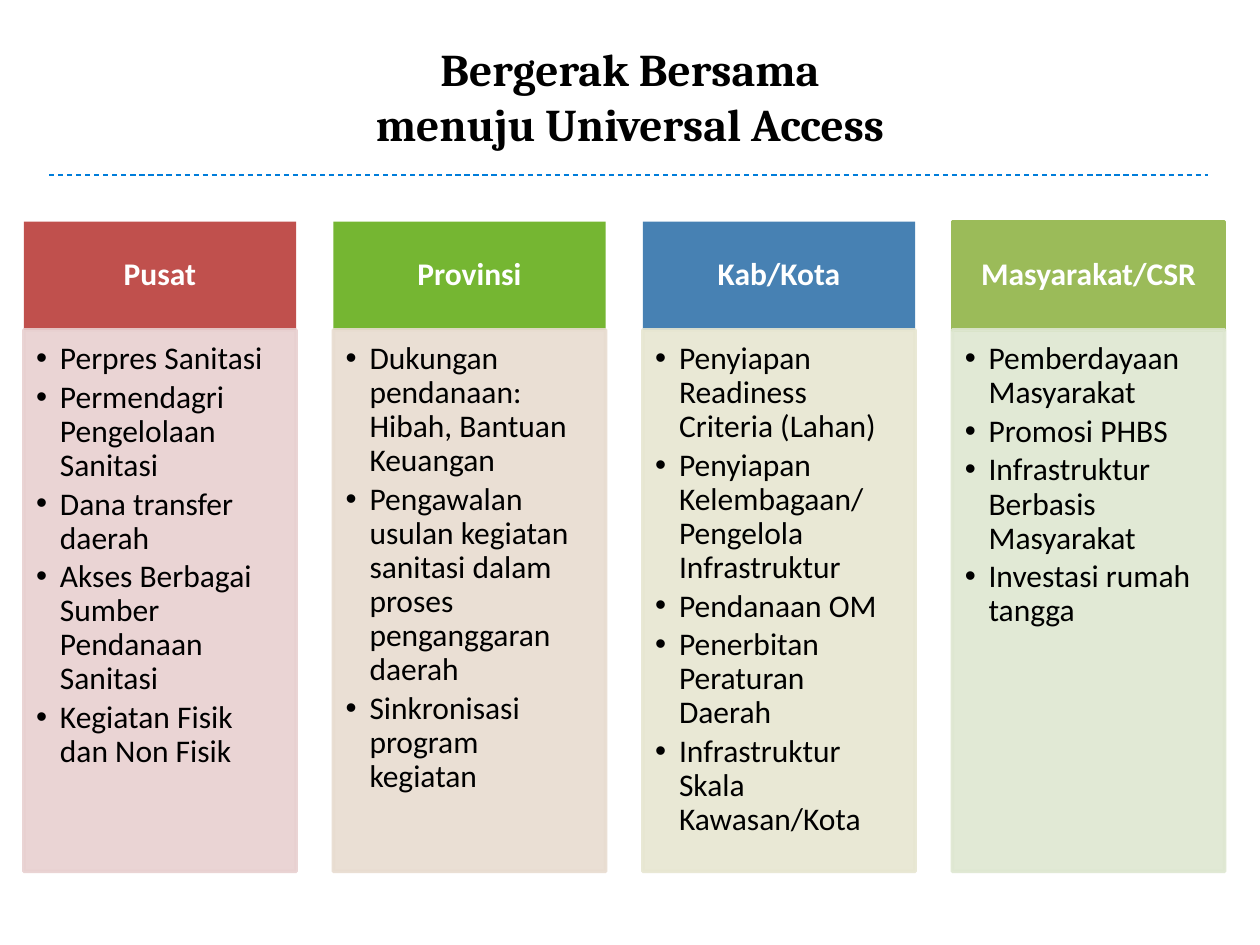
from pptx import Presentation
from pptx.dml.color import RGBColor
from pptx.enum.dml import MSO_LINE
from pptx.enum.shapes import MSO_CONNECTOR, MSO_SHAPE
from pptx.enum.text import MSO_ANCHOR as Anchor, MSO_AUTO_SIZE, PP_ALIGN as Align
from pptx.oxml.ns import qn
from pptx.util import Cm, Pt
from lxml.etree import SubElement

TITLE = ["Bergerak Bersama", "menuju Universal Access"]
TITLE_FONT = {"name": "Cambria", "size": Pt(25.9), "bold": True}
HEADER_FONT = {"name": "Calibri", "size": Pt(18), "bold": True}
LIST_FONT = {"name": "Calibri", "size": Pt(18), "bold": False}
HEADER_HEIGHT = 2.18
INDENT = Cm(0.48)

# Heading, header fill, header outline, list fill, list items
COLUMNS = [
    ("Pusat", "C0504D", None, "E8D0D0", [
        "Perpres Sanitasi",
        "Permendagri Pengelolaan Sanitasi",
        "Dana transfer daerah",
        "Akses Berbagai Sumber Pendanaan Sanitasi",
        "Kegiatan Fisik dan Non Fisik"]),
    ("Provinsi", "75B632", None, "E8DCD0", [
        "Dukungan pendanaan: Hibah, Bantuan Keuangan",
        "Pengawalan usulan kegiatan sanitasi dalam proses penganggaran daerah",
        "Sinkronisasi program kegiatan"]),
    ("Kab/Kota", "4781B3", None, "E7E6D1", [
        "Penyiapan Readiness Criteria (Lahan)",
        "Penyiapan Kelembagaan/ Pengelola Infrastruktur",
        "Pendanaan OM",
        "Penerbitan Peraturan Daerah",
        "Infrastruktur Skala Kawasan/Kota"]),
    ("Masyarakat/CSR", "9BBB59", "9BBB59", "DEE7D1", [
        "Pemberdayaan Masyarakat",
        "Promosi PHBS",
        "Infrastruktur Berbasis Masyarakat",
        "Investasi rumah tangga"]),
]


def paint(color_format, color, alpha=None):
    """Solid colour from a hex string, with optional opacity in percent."""
    color_format.fore_color.rgb = RGBColor.from_string(color)
    if alpha is not None:
        for element in color_format._xPr.iter(qn("a:srgbClr")):
            if element.find(qn("a:alpha")) is None:
                SubElement(element, qn("a:alpha"), val=str(alpha * 1000))


def apply(target, values):
    for name, value in values.items():
        setattr(target, name, value)


def set_frame(frame, anchor, insets):
    sides = ("margin_left", "margin_top", "margin_right", "margin_bottom")
    apply(frame, {"word_wrap": True, "auto_size": MSO_AUTO_SIZE.NONE,
                  "vertical_anchor": anchor})
    apply(frame, {side: Cm(inset) for side, inset in zip(sides, insets)})


def write(frame, lines, font, color, layout, bullets=False):
    for index, line in enumerate(lines):
        paragraph = frame.paragraphs[0] if index == 0 else frame.add_paragraph()
        apply(paragraph, layout)
        if bullets:
            properties = paragraph._p.get_or_add_pPr()
            properties.set("marL", str(INDENT))
            properties.set("indent", str(-INDENT))
            SubElement(properties, qn("a:buFont"), typeface="Arial")
            SubElement(properties, qn("a:buChar"), char="•")
        run = paragraph.add_run()
        run.text = line
        apply(run.font, font)
        paint_font = run.font.fill
        paint_font.solid()
        paint(paint_font, color)


def add_panel(slide, box, fill, outline=None, alpha=None):
    shape = slide.shapes.add_shape(MSO_SHAPE.RECTANGLE, *map(Cm, box))
    shape.shadow.inherit = False
    shape.fill.solid()
    paint(shape.fill, fill, alpha)
    if outline:
        shape.line.width = Pt(2)
        shape.line.fill.solid()
        paint(shape.line.fill, outline, alpha)
    else:
        shape.line.fill.background()
    return shape


def add_title(slide, box):
    left, top, width, height = box
    title = slide.shapes.title
    apply(title, {"left": Cm(left), "top": Cm(top),
                  "width": Cm(width), "height": Cm(height)})
    set_frame(title.text_frame, Anchor.MIDDLE, (0.25, 0.13, 0.25, 0.13))
    write(title.text_frame, TITLE, TITLE_FONT, "000000",
          {"alignment": Align.CENTER, "space_before": Pt(0)})


def add_rule(slide, left, right, y):
    rule = slide.shapes.add_connector(
        MSO_CONNECTOR.STRAIGHT, Cm(left), Cm(y), Cm(right), Cm(y))
    apply(rule.line, {"width": Pt(0.75), "dash_style": MSO_LINE.DASH})
    rule.line.fill.solid()
    paint(rule.line.fill, "007DDA")
    SubElement(rule._element.spPr, qn("a:effectLst"))


def add_column(slide, box, heading, header_fill, header_outline, list_fill, items):
    left, top, width, height = box

    # Header
    header = add_panel(slide, (left, top, width, HEADER_HEIGHT),
                       header_fill, header_outline)
    set_frame(header.text_frame, Anchor.MIDDLE, (0.36, 0.2, 0.36, 0.2))
    write(header.text_frame, [heading], HEADER_FONT, "FFFFFF",
          {"alignment": Align.CENTER, "line_spacing": 0.9})

    # Bulleted list
    body = add_panel(slide, (left, top + HEADER_HEIGHT, width, height - HEADER_HEIGHT),
                     list_fill, list_fill, alpha=90)
    set_frame(body.text_frame, Anchor.TOP, (0.25, 0.25, 0.36, 0.41))
    write(body.text_frame, items, LIST_FONT, "000000",
          {"alignment": Align.LEFT, "line_spacing": 0.9, "space_after": Pt(2.7)},
          bullets=True)


def add_columns(slide, box):
    left, top, width, height = box
    column_width = 5.49
    step = (width - column_width) / (len(COLUMNS) - 1)
    for index, column in enumerate(COLUMNS):
        add_column(slide, (left + index * step, top, column_width, height), *column)


def main():
    presentation = Presentation()
    presentation.slide_width, presentation.slide_height = Cm(25.4), Cm(19.05)
    slide = presentation.slides.add_slide(presentation.slide_layouts[5])
    add_rule(slide, 0.99, 24.36, 3.53)
    add_title(slide, (0, 0.81, 25.4, 2.24))
    add_columns(slide, (0.48, 4.47, 24.21, 13.1))
    presentation.save("out.pptx")


if __name__ == "__main__":
    main()
